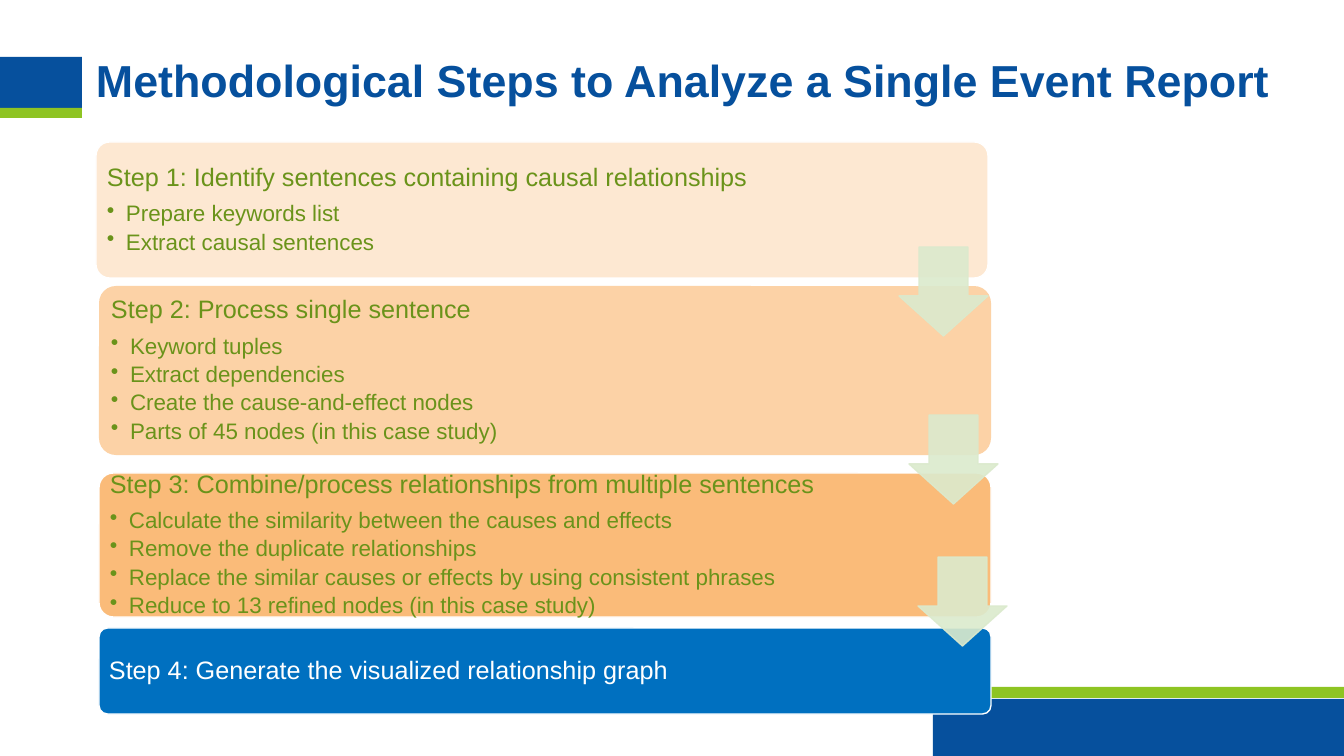
"""Build a slide of four method steps joined by down arrows."""
from lxml import etree
from pptx import Presentation
from pptx.dml.color import RGBColor
from pptx.enum.shapes import MSO_SHAPE
from pptx.enum.text import MSO_ANCHOR
from pptx.oxml.ns import qn
from pptx.util import Pt

RECT = MSO_SHAPE.RECTANGLE
ROUND = MSO_SHAPE.ROUNDED_RECTANGLE
ARROW = MSO_SHAPE.DOWN_ARROW
TOP, MIDDLE = MSO_ANCHOR.TOP, MSO_ANCHOR.MIDDLE

NAVY = RGBColor(0x06, 0x50, 0x9D)
LIME = RGBColor(0x8E, 0xC4, 0x23)
GREEN = RGBColor(0x6A, 0x93, 0x1A)
WHITE = RGBColor(0xFF, 0xFF, 0xFF)
CREAM = RGBColor(0xFD, 0xE8, 0xD2)
PEACH = RGBColor(0xFC, 0xD2, 0xA6)
AMBER = RGBColor(0xFA, 0xBB, 0x79)
BLUE = RGBColor(0x00, 0x70, 0xC0)
MINT = RGBColor(0xDB, 0xEA, 0xCD)

TITLE = "Methodological Steps to Analyze a Single Event Report"
BANDS = [
    (933, 699, 411, 57, NAVY),
    (933, 687, 411, 11, LIME),
    (0, 57, 82, 51, NAVY),
    (0, 108, 82, 10, LIME),
]
STEPS = [
    (96, 142, 136, 4, CREAM, WHITE, GREEN,
     "Step 1: Identify sentences containing causal relationships",
     ["Prepare keywords list", "Extract causal sentences"]),
    (99, 286, 169, 5, PEACH, None, GREEN,
     "Step 2: Process single sentence",
     ["Keyword tuples", "Extract dependencies",
      "Create the cause-and-effect nodes",
      "Parts of 45 nodes (in this case study)"]),
    (99, 473, 144, 4, AMBER, WHITE, GREEN,
     "Step 3: Combine/process relationships from multiple sentences",
     ["Calculate the similarity between the causes and effects",
      "Remove the duplicate relationships",
      "Replace the similar causes or effects by using consistent phrases",
      "Reduce to 13 refined nodes (in this case study)"]),
    (99, 628, 86, 3, BLUE, WHITE, WHITE,
     "Step 4: Generate the visualized relationship graph", []),
]
ARROWS = [(899, 247), (909, 415), (918, 557)]
STEP_W, TEXT_W, ARROW_W = 892, 725, 89
PAD, INDENT = 7, 19
PX = 914400 / 100.8


def px(num):
    """Turn px into EMU."""
    return round(num * PX)


def add_box(kind, left, top, width, height, fill, line=None):
    """Add a filled preset shape."""
    box = slide.shapes.add_shape(kind, *map(px, (left, top, width, height)))
    box.shadow.inherit = False
    box.fill.solid()
    box.fill.fore_color.rgb = fill
    if line is None:
        box.line.fill.background()
    else:
        box.line.color.rgb = line
        box.line.width = Pt(1)
    return box


def add_frame(left, top, width, height, pads, anchor):
    """Add a wrapping text box and give its text frame."""
    box = slide.shapes.add_textbox(*map(px, (left, top, width, height)))
    frame = box.text_frame
    frame.word_wrap = True
    frame.vertical_anchor = anchor
    (frame.margin_left, frame.margin_top,
     frame.margin_right, frame.margin_bottom) = map(px, pads)
    return frame


def add_text(para, text, size, color, after=0, bold=False):
    """Fill one paragraph with one run."""
    para.line_spacing = 0.9
    para.space_after = Pt(after)
    run = para.add_run()
    run.text = text
    run.font.name = "Arial"
    run.font.size = Pt(size)
    run.font.bold = bold
    run.font.color.rgb = color


def add_bullet(para):
    """Give a paragraph a hanging bullet."""
    props = para._p.get_or_add_pPr()
    props.set("marL", str(px(INDENT)))
    props.set("indent", str(-px(INDENT)))
    etree.SubElement(props, qn("a:buChar"), char="•")


def add_step(left, top, height, inset, fill, line, color, head, items):
    """Add a step panel with its heading and bullets."""
    panel = add_box(ROUND, left, top, STEP_W, height, fill, line)
    panel.adjustments[0] = 0.1
    frame = add_frame(left + inset, top + inset, TEXT_W, height - 2 * inset,
                      [PAD] * 4, MIDDLE)
    add_text(frame.paragraphs[0], head, 18, color, 7.5)
    for item in items:
        para = frame.add_paragraph()
        add_bullet(para)
        add_text(para, item, 16, color, 3)


def add_arrow(left, top):
    """Add a slightly clear down arrow."""
    arrow = add_box(ARROW, left, top, ARROW_W, ARROW_W, MINT, MINT)
    arrow.adjustments[0] = 0.55
    arrow.adjustments[1] = 0.45
    for tint in arrow._element.spPr.iter(qn("a:srgbClr")):
        etree.SubElement(tint, qn("a:alpha"), val="90000")


deck = Presentation()
deck.slide_width, deck.slide_height = px(1344), px(756)
slide = deck.slides.add_slide(deck.slide_layouts[6])

for band in BANDS:
    add_box(RECT, *band)
title = add_frame(96, 59, 1224, 54, (0, 0, 10, 5), TOP)
add_text(title.paragraphs[0], TITLE, 32, NAVY, bold=True)
for step in STEPS:
    add_step(*step)
for spot in ARROWS:
    add_arrow(*spot)

deck.save("out.pptx")
